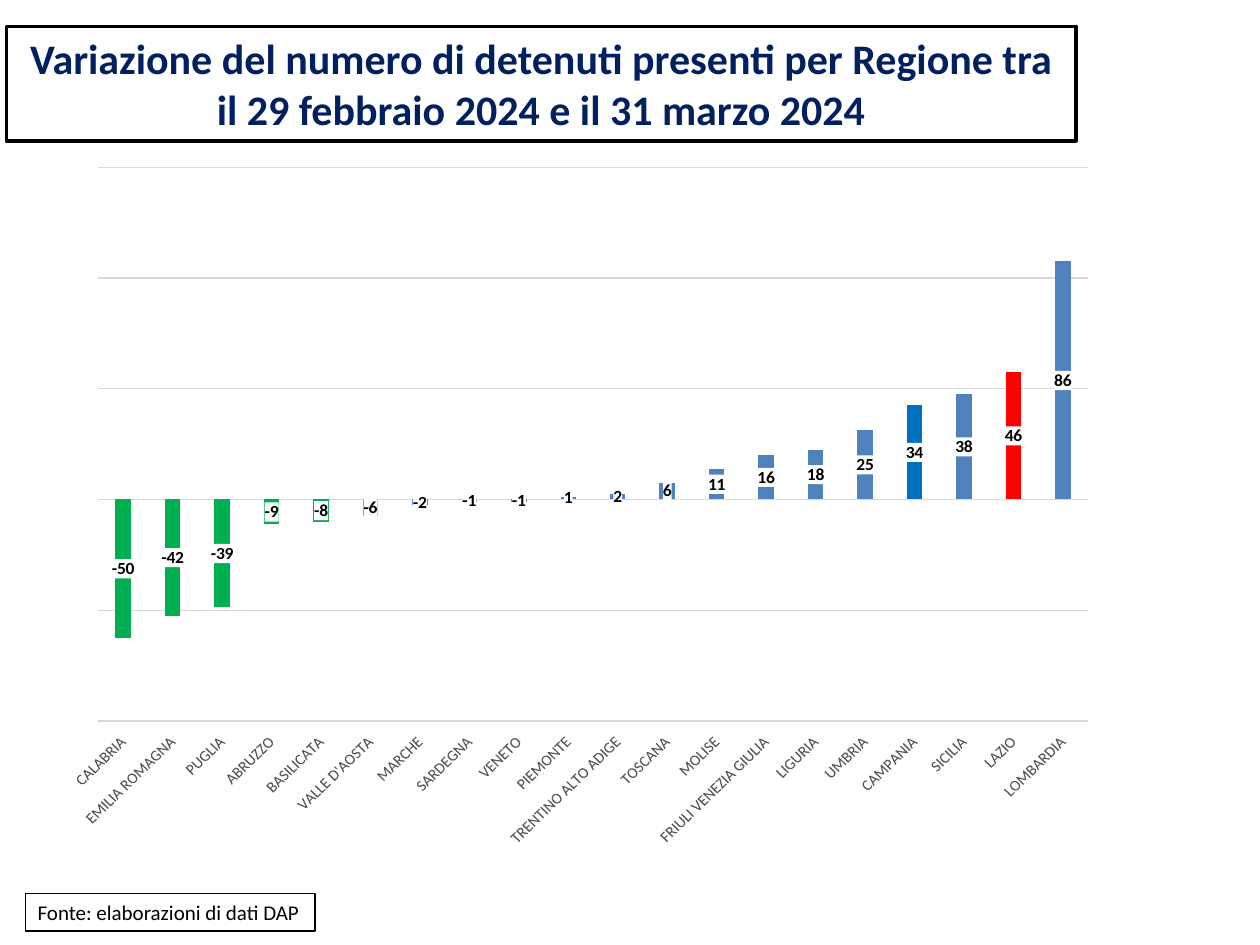
from dataclasses import dataclass

from lxml import etree
from pptx import Presentation
from pptx.chart.data import CategoryChartData
from pptx.dml.color import RGBColor
from pptx.enum.chart import (XL_CHART_TYPE, XL_LABEL_POSITION,
                             XL_TICK_LABEL_POSITION, XL_TICK_MARK)
from pptx.enum.shapes import MSO_SHAPE
from pptx.enum.text import MSO_ANCHOR, MSO_AUTO_SIZE, PP_ALIGN
from pptx.oxml import parse_xml
from pptx.oxml.ns import nsdecls, qn
from pptx.util import Cm, Pt

COLUMN = XL_CHART_TYPE.COLUMN_CLUSTERED
MIDDLE = XL_LABEL_POSITION.CENTER
LOW = XL_TICK_LABEL_POSITION.LOW
NO_TICK = XL_TICK_MARK.NONE
RECT = MSO_SHAPE.RECTANGLE
GROW = MSO_AUTO_SIZE.SHAPE_TO_FIT_TEXT
LEFT, CENTER = PP_ALIGN.LEFT, PP_ALIGN.CENTER

FONT = "Calibri"
COLORS = {
    "white": "FFFFFF", "black": "000000", "navy": "002060",
    "gray": "595959", "grid": "D9D9D9", "bar": "4F81BD",
    "green": "00B050", "blue": "0070C0", "red": "FF0000",
}


@dataclass
class Region:
    name: str
    change: int
    color: str = "bar"


@dataclass
class Frame:
    left: float
    top: float
    width: float
    height: float
    line: float = 0


REGIONS = [
    Region("CALABRIA", -50, "green"),
    Region("EMILIA ROMAGNA", -42, "green"),
    Region("PUGLIA", -39, "green"),
    Region("ABRUZZO", -9, "green"),
    Region("BASILICATA", -8, "green"),
    Region("VALLE D'AOSTA", -6, "green"),
    Region("MARCHE", -2),
    Region("SARDEGNA", -1),
    Region("VENETO", -1),
    Region("PIEMONTE", 1),
    Region("TRENTINO ALTO ADIGE", 2),
    Region("TOSCANA", 6),
    Region("MOLISE", 11),
    Region("FRIULI VENEZIA GIULIA", 16),
    Region("LIGURIA", 18),
    Region("UMBRIA", 25),
    Region("CAMPANIA", 34, "blue"),
    Region("SICILIA", 38),
    Region("LAZIO", 46, "red"),
    Region("LOMBARDIA", 86),
]
TITLE = Frame(0.13, 0.53, 21.56, 2.31, 2)
SOURCE = Frame(0.51, 18.01, 5.84, 0.76, 0.75)
CHART = Frame(1.22, 2.92, 21.26, 14.15)
PLOT = {"x": 0.036, "y": 0.033, "w": 0.938, "h": 0.815}


def rgb(name: str) -> RGBColor:
    return RGBColor.from_string(COLORS[name])


def paint(fill, color: str) -> None:
    fill.solid()
    fill.fore_color.rgb = rgb(color)


def style(font, size: float, color: str = "black", bold: bool = False) -> None:
    font.name, font.size, font.bold = FONT, Pt(size), bold
    font.color.rgb = rgb(color)


def rule(line, color: str, width: float) -> None:
    line.color.rgb = rgb(color)
    line.width = Pt(width)


def place(shape, box: Frame) -> None:
    shape.left, shape.top = Cm(box.left), Cm(box.top)
    shape.width, shape.height = Cm(box.width), Cm(box.height)
    paint(shape.fill, "white")
    rule(shape.line, "black", box.line)


def write(shape, text: str, *, size: float, color: str = "black",
          bold: bool = False, align=LEFT, wrap: bool = True) -> None:
    frame = shape.text_frame
    frame.word_wrap = wrap
    frame.auto_size = GROW
    frame.vertical_anchor = MSO_ANCHOR.TOP
    para = frame.paragraphs[0]
    para.alignment = align
    run = para.add_run()
    run.text = text
    style(run.font, size, color, bold)


def set_plot(chart) -> None:
    """Fix the inner plot area as fractions of the chart."""
    area = chart._chartSpace.chart.plotArea
    for old in area.findall(qn("c:layout")):
        area.remove(old)
    layout = etree.Element(qn("c:layout"))
    manual = etree.SubElement(layout, qn("c:manualLayout"))
    parts = {"layoutTarget": "inner", "xMode": "edge", "yMode": "edge", **PLOT}
    for tag, val in parts.items():
        etree.SubElement(manual, qn(f"c:{tag}")).set("val", str(val))
    area.insert(0, layout)


def set_axes(chart) -> None:
    names = chart.category_axis
    names.tick_label_position = LOW
    names.major_tick_mark = names.minor_tick_mark = NO_TICK
    style(names.tick_labels.font, 9, "gray")
    rule(names.format.line, "grid", 0.75)
    body = names._element.find(qn("c:txPr")).find(qn("a:bodyPr"))
    body.set("rot", "-2700000")
    body.set("vert", "horz")

    scale = chart.value_axis
    scale.minimum_scale, scale.maximum_scale = -80, 120
    scale.major_unit = 40
    scale.has_major_gridlines = True
    rule(scale.major_gridlines.format.line, "grid", 0.75)
    scale.visible = False


def set_bars(chart) -> None:
    plot = chart.plots[0]
    plot.gap_width, plot.overlap = 219, -27
    plot.vary_by_categories = False
    bars = plot.series[0]
    bars.invert_if_negative = False
    paint(bars.format.fill, "bar")
    for i, region in enumerate(REGIONS):
        if region.color != "bar":
            paint(bars.points[i].format.fill, region.color)

    # Value labels on a white ground
    labels = bars.data_labels
    labels.show_value = True
    labels.position = MIDDLE
    style(labels.font, 10, bold=True)
    ground = parse_xml(
        f'<c:spPr {nsdecls("c", "a")}><a:solidFill><a:srgbClr '
        f'val="{COLORS["white"]}"/></a:solidFill></c:spPr>')
    labels._element.find(qn("c:txPr")).addprevious(ground)


def add_bars(slide, box: Frame) -> None:
    data = CategoryChartData()
    data.categories = [r.name for r in REGIONS]
    data.add_series("Series 1", [r.change for r in REGIONS])
    chart = slide.shapes.add_chart(
        COLUMN, Cm(box.left), Cm(box.top), Cm(box.width), Cm(box.height),
        data).chart
    chart.has_legend = chart.has_title = False
    style(chart.font, 10)
    set_plot(chart)
    set_axes(chart)
    set_bars(chart)


def main() -> None:
    deck = Presentation()
    deck.slide_width, deck.slide_height = Cm(25.4), Cm(19.05)
    slide = deck.slides.add_slide(deck.slide_layouts[5])

    # Title
    title = slide.shapes.title
    place(title, TITLE)
    write(title, "Variazione del numero di detenuti presenti per Regione tra "
          "il 29 febbraio 2024 e il 31 marzo 2024",
          size=24, color="navy", bold=True, align=CENTER)

    # Source note
    note = slide.shapes.add_shape(RECT, 0, 0, 0, 0)
    note.shadow.inherit = False
    place(note, SOURCE)
    write(note, "Fonte: elaborazioni di dati DAP", size=12, wrap=False)

    # Change by region
    add_bars(slide, CHART)
    deck.save("out.pptx")


if __name__ == "__main__":
    main()
